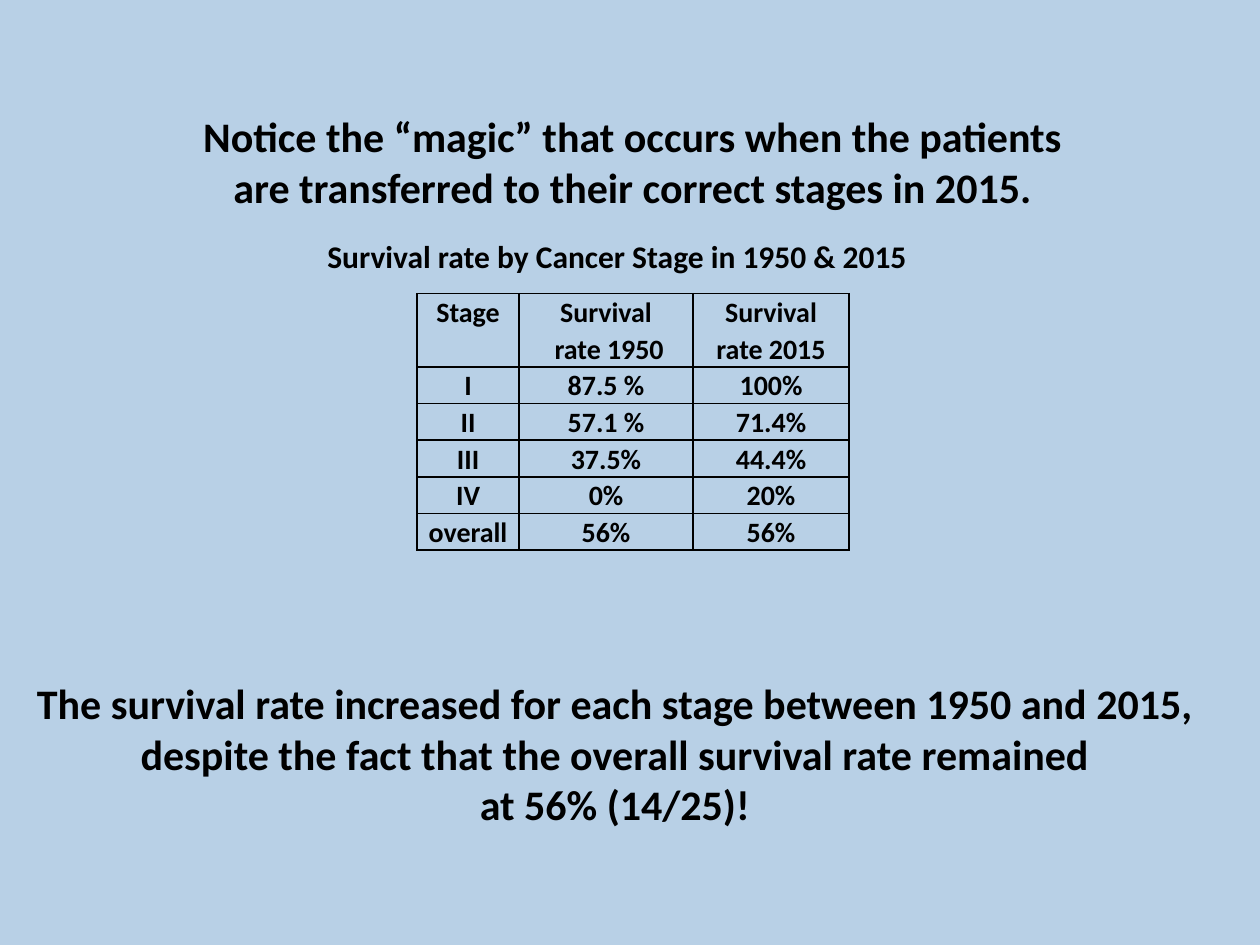
from lxml.etree import SubElement
from pptx import Presentation
from pptx.dml.color import RGBColor
from pptx.enum.text import MSO_ANCHOR, MSO_AUTO_SIZE, PP_ALIGN
from pptx.oxml.ns import qn
from pptx.util import Inches, Pt


def rgb(value):
    """Turn a hex string into a colour."""
    return RGBColor.from_string(value)


class SlideBuilder:
    """Hold the style and the current slide."""

    font, ink, background = "Calibri", "000000", "B8D0E6"

    def __init__(self, prs):
        """Add a title-only slide with a plain background."""
        self.s = prs.slides.add_slide(prs.slide_layouts[5])
        fill = self.s.background.fill
        fill.solid()
        fill.fore_color.rgb = rgb(self.background)

    def set_text(self, tf, text, size, align=PP_ALIGN.CENTER, spacing=1.0):
        """Set text and format its paragraphs and runs."""
        tf.text = text
        for p in tf.paragraphs:
            p.alignment = align
            p.line_spacing = spacing
            p.space_before = Pt(0)
            for r in p.runs:
                r.font.name = self.font
                r.font.size = Pt(size)
                r.font.bold = True
                r.font.color.rgb = rgb(self.ink)

    def title(self, text, left, top, width, height, size=24):
        """Move, fill and format the title placeholder."""
        sp = self.s.shapes.title
        sp.left, sp.top = Inches(left), Inches(top)
        sp.width, sp.height = Inches(width), Inches(height)
        tf = sp.text_frame
        tf.auto_size = MSO_AUTO_SIZE.NONE
        tf.vertical_anchor = MSO_ANCHOR.TOP
        self.set_text(tf, text, size)

    def text(self, text, left, top, width, height, size=24,
             align=PP_ALIGN.CENTER, wrap=True):
        """Add a text box."""
        sp = self.s.shapes.add_textbox(
            Inches(left), Inches(top), Inches(width), Inches(height))
        tf = sp.text_frame
        tf.word_wrap = wrap
        self.set_text(tf, text, size, align)

    def border(self, cell):
        """Draw a thin line on all four sides of a cell."""
        tc_pr = cell._tc.get_or_add_tcPr()
        for index, side in enumerate(("lnL", "lnR", "lnT", "lnB")):
            ln = tc_pr.makeelement(qn(f"a:{side}"), {"w": str(Pt(1))})
            fill = SubElement(ln, qn("a:solidFill"))
            SubElement(fill, qn("a:srgbClr"), val=self.ink)
            tc_pr.insert(index, ln)

    def table(self, rows, left, top, widths, heights, size=16):
        """Add an unfilled table with ruled cells."""
        table = self.s.shapes.add_table(
            len(rows), len(widths), Inches(left), Inches(top),
            Inches(sum(widths)), Inches(sum(heights))).table
        table.first_row = table.horz_banding = False
        for column, width in zip(table.columns, widths):
            column.width = Inches(width)
        for row, height, values in zip(table.rows, heights, rows):
            row.height = Inches(height)
            for cell, value in zip(row.cells, values):
                cell.margin_left = cell.margin_right = Inches(0.07)
                cell.margin_top = cell.margin_bottom = 0
                cell.fill.background()
                self.set_text(cell.text_frame, value, size, spacing=1.07)
                self.border(cell)


def main():
    """Build the survival rate slide."""
    prs = Presentation()
    prs.slide_width, prs.slide_height = Inches(10), Inches(7.5)
    slide = SlideBuilder(prs)
    slide.title("Notice the “magic” that occurs when the patients\n"
                "are transferred to their correct stages in 2015.",
                -0.08, 0.83, 10.2, 1.82)
    rows = [
        ("Stage", "Survival\n rate 1950", "Survival rate 2015"),
        ("I", "87.5 %", "100%"),
        ("II", "57.1 %", "71.4%"),
        ("III", "37.5%", "44.4%"),
        ("IV", "0%", "20%"),
        ("overall", "56%", "56%"),
    ]
    slide.table(rows, 3.31, 2.33, (0.81, 1.38, 1.24), [0.56] + [0.28] * 5)
    slide.text("Survival rate by Cancer Stage in 1950 & 2015",
               2.5, 1.83, 4.8, 0.4, 18, PP_ALIGN.LEFT, False)
    slide.text("The survival rate increased for each stage between 1950 and 2015,\n"
               "despite the fact that the overall survival rate remained\n"
               "at 56% (14/25)!", 0.08, 5.33, 9.6, 1.31)
    prs.save("out.pptx")


if __name__ == "__main__":
    main()
